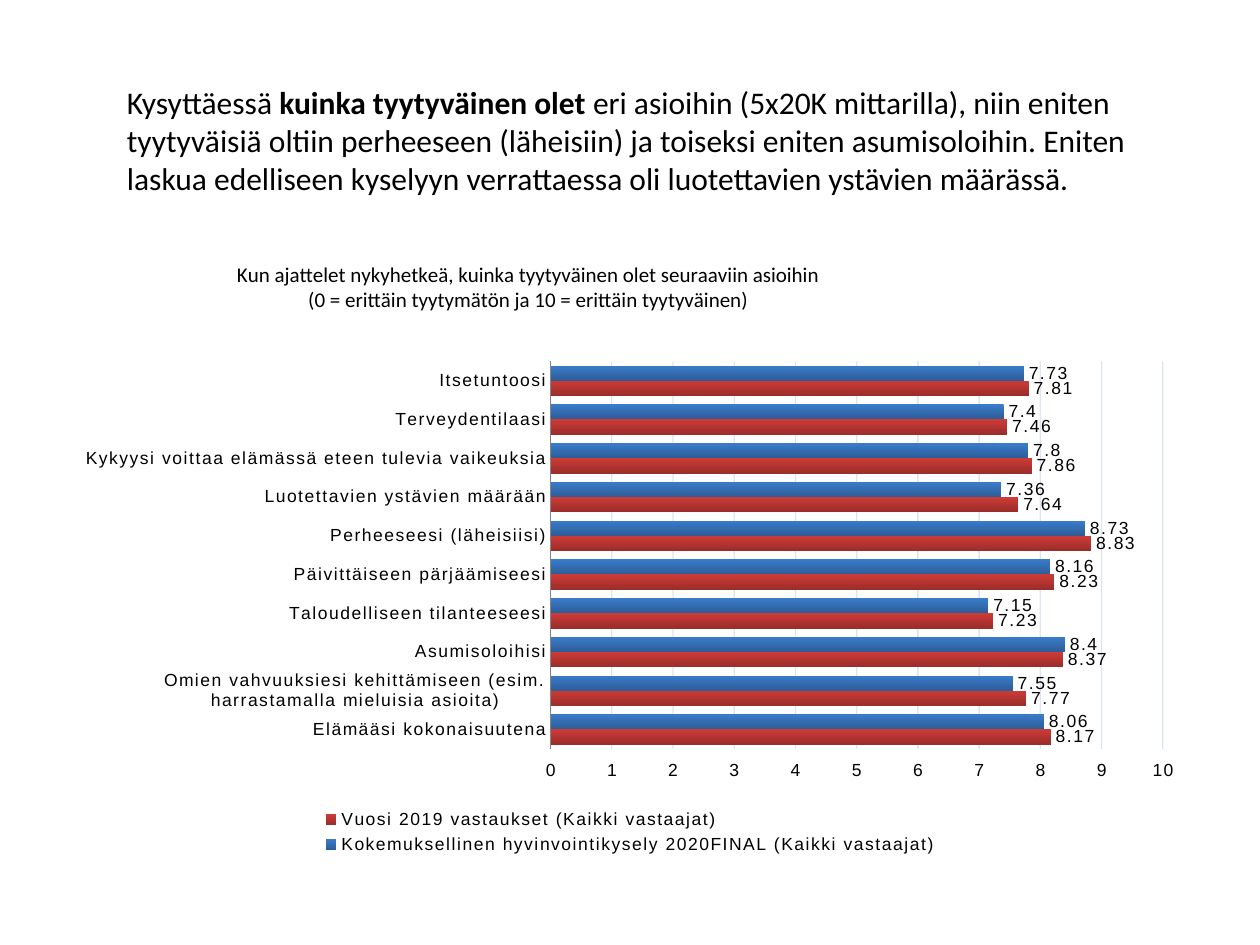
"""Build a slide with a satisfaction summary and a clustered bar chart."""
from lxml import etree
from pptx import Presentation
from pptx import util as u
from pptx.chart.data import CategoryChartData
from pptx.dml.color import RGBColor
from pptx.enum import chart as ch
from pptx.enum import text
from pptx.oxml.ns import qn


def style(font, size, name, bold=False, color="000000"):
    font.size = u.Pt(size)
    font.name = name
    font.bold = bold
    font.color.rgb = RGBColor.from_string(color)


def place(parent, index, **box):
    for old in parent.findall(qn("c:layout")):
        parent.remove(old)
    layout = etree.Element(qn("c:layout"))
    manual = etree.SubElement(layout, qn("c:manualLayout"))
    for tag, val in box.items():
        etree.SubElement(manual, qn("c:" + tag)).set("val", str(val))
    parent.insert(index, layout)


prs = Presentation()
prs.slide_width, prs.slide_height = u.Cm(25.4), u.Cm(19.05)
s = prs.slides.add_slide(prs.slide_layouts[6])

data = CategoryChartData()
data.categories = [
    "Itsetuntoosi",
    "Terveydentilaasi",
    "Kykyysi voittaa elämässä eteen tulevia vaikeuksia",
    "Luotettavien ystävien määrään",
    "Perheeseesi (läheisiisi)",
    "Päivittäiseen pärjäämiseesi",
    "Taloudelliseen tilanteeseesi",
    "Asumisoloihisi",
    "Omien vahvuuksiesi kehittämiseen (esim. harrastamalla mieluisia asioita)",
    "Elämääsi kokonaisuutena",
]
data.add_series("Kokemuksellinen hyvinvointikysely 2020FINAL (Kaikki vastaajat)",
                [7.73, 7.4, 7.8, 7.36, 8.73, 8.16, 7.15, 8.4, 7.55, 8.06])
data.add_series("Vuosi 2019 vastaukset (Kaikki vastaajat)",
                [7.81, 7.46, 7.86, 7.64, 8.83, 8.23, 7.23, 8.37, 7.77, 8.17])
chart = s.shapes.add_chart(ch.XL_CHART_TYPE.BAR_CLUSTERED, u.Cm(1.27), u.Cm(4.93),
                           u.Cm(22.86), u.Cm(12.4), data).chart
style(chart.font, 10, "Calibri")

tf = chart.chart_title.text_frame
tf.text = "Kun ajattelet nykyhetkeä, kuinka tyytyväinen olet seuraaviin asioihin"
tf.add_paragraph().text = "(0 = erittäin tyytymätön ja 10 = erittäin tyytyväinen)"
for p in tf.paragraphs:
    p.alignment = text.PP_ALIGN.CENTER
    for r in p.runs:
        style(r.font, 12, "Calibri")

plot = chart.plots[0]
plot.gap_width, plot.overlap = 58, 0
plot.vary_by_categories = False
for series, colors in zip(plot.series, [("3A7CCB", "2C5D98"), ("CE3B37", "9B2D2A")]):
    fill = series.format.fill
    fill.gradient()
    fill.gradient_angle = 270
    for stop, color in zip(fill.gradient_stops, colors):
        stop.color.rgb = RGBColor.from_string(color)
    series.invert_if_negative = False
    labels = series.data_labels
    labels.show_value = True
    labels.position = ch.XL_LABEL_POSITION.OUTSIDE_END
    style(labels.font, 10, "Arial")

cat, val = chart.category_axis, chart.value_axis
for axis in (cat, val):
    axis.major_tick_mark = axis.minor_tick_mark = ch.XL_TICK_MARK.NONE
    style(axis.tick_labels.font, 10, "Arial")
cat.reverse_order = True
cat.format.line.color.rgb = RGBColor.from_string("868686")
val.tick_label_position = ch.XL_TICK_LABEL_POSITION.HIGH
val.minimum_scale, val.maximum_scale, val.major_unit = 0, 10, 1
val.format.line.fill.background()
grid = val.major_gridlines.format.line
grid.width = u.Pt(0.75)
grid.color.rgb = RGBColor.from_string("4F81BD")

chart.has_legend = True
legend = chart.legend
legend.position = ch.XL_LEGEND_POSITION.BOTTOM
legend.include_in_layout = False
style(legend.font, 10, "Arial")

root = chart._chartSpace
for rgb in root.iterfind(".//" + qn("c:majorGridlines") + "//" + qn("a:srgbClr")):
    etree.SubElement(rgb, qn("a:alpha")).set("val", "20000")
for props in root.iter(qn("a:defRPr")):
    latin = props.find(qn("a:latin"))
    if latin is not None and latin.get("typeface") == "Arial":
        props.set("spc", "100")
place(next(root.iter(qn("c:title"))), 1, xMode="edge", yMode="edge", x=0.15, y=0.02)
place(next(root.iter(qn("c:plotArea"))), 0, layoutTarget="inner",
      xMode="edge", yMode="edge", x=0.43, y=0.19, w=0.54, h=0.63)
place(next(root.iter(qn("c:legend"))), 1,
      xMode="edge", yMode="edge", x=0.22, y=0.91, w=0.56, h=0.09)

sp = s.shapes.add_textbox(u.Cm(2.31), u.Cm(1.55), u.Cm(20.8), u.Cm(2.57))
tf = sp.text_frame
tf.word_wrap = True
tf.auto_size = text.MSO_AUTO_SIZE.SHAPE_TO_FIT_TEXT
p = tf.paragraphs[0]
for words, bold in [
    ("Kysyttäessä ", False),
    ("kuinka tyytyväinen olet ", True),
    ("eri asioihin (5x20K mittarilla), niin eniten tyytyväisiä oltiin perheeseen "
     "(läheisiin) ja toiseksi eniten asumisoloihin. Eniten laskua edelliseen kyselyyn "
     "verrattaessa oli luotettavien ystävien määrässä.", False),
]:
    r = p.add_run()
    r.text = words
    style(r.font, 18, "Calibri", bold)

prs.save("out.pptx")
